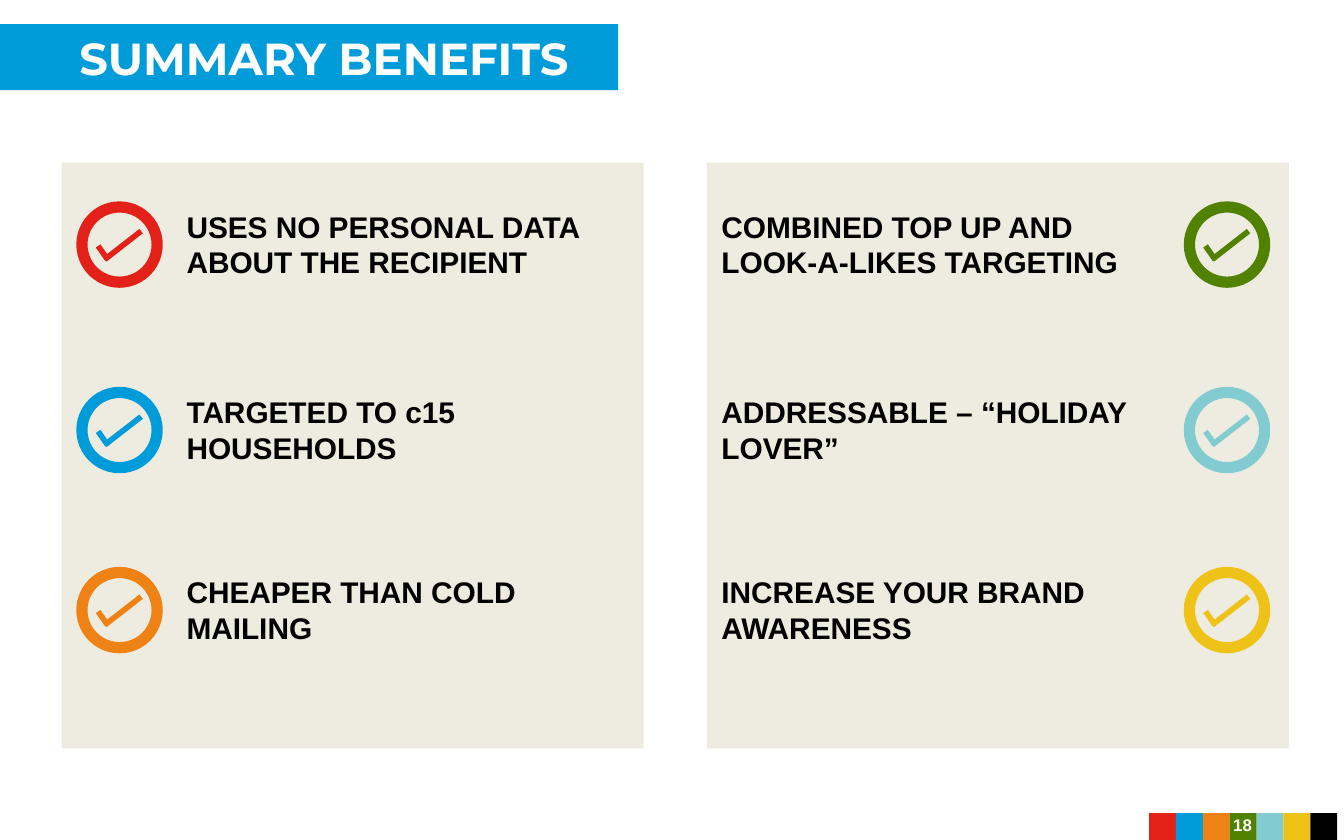
from lxml import etree
from pptx import Presentation
from pptx.dml.color import RGBColor
from pptx.enum.shapes import MSO_CONNECTOR, MSO_SHAPE
from pptx.enum.text import MSO_ANCHOR, PP_ALIGN
from pptx.oxml.ns import qn
from pptx.util import Inches, Pt

COLORS = {
    "red": "E32119", "blue": "009CDA", "orange": "EF8214", "green": "508200",
    "aqua": "82CBD0", "yellow": "EEC216", "black": "000000",
    "white": "FFFFFF", "beige": "EEECE1",
}
HEADING = "SUMMARY BENEFITS"
PAGE_NUMBER = "18"
STRIP = ["red", "blue", "orange", "green", "aqua", "yellow", "black"]
COLUMNS = [
    {"panel_x": 0.46, "tick_x": 0.61, "text_x": 1.29, "benefits": [
        ("red", ["USES NO PERSONAL DATA", "ABOUT THE RECIPIENT"]),
        ("blue", ["TARGETED TO c15 HOUSEHOLDS"]),
        ("orange", ["CHEAPER THAN COLD", "MAILING"]),
    ]},
    {"panel_x": 5.26, "tick_x": 8.85, "text_x": 5.27, "benefits": [
        ("green", ["COMBINED TOP UP AND LOOK-A-LIKES TARGETING"]),
        ("aqua", ["ADDRESSABLE – “HOLIDAY LOVER”"]),
        ("yellow", ["INCREASE YOUR BRAND AWARENESS"]),
    ]},
]
ROW_TOPS = [1.54, 2.92, 4.26]
RING_SIZE = 0.56
TICK_STROKES = [((0.12, 0.29), (0.19, 0.39)), ((0.17, 0.39), (0.44, 0.18))]
SQUARE = 0.2


def rgb(color):
    return RGBColor.from_string(COLORS[color])


def add_box(slide, kind, x, y, width, height):
    box = slide.shapes.add_shape(
        kind, Inches(x), Inches(y), Inches(width), Inches(height))
    box.shadow.inherit = False
    return box


def add_block(slide, color, x, y, width, height):
    block = add_box(slide, MSO_SHAPE.RECTANGLE, x, y, width, height)
    block.fill.solid()
    block.fill.fore_color.rgb = rgb(color)
    block.line.fill.background()


def add_words(paragraph, words, size, color, font="Arial"):
    run = paragraph.add_run()
    run.text = words
    run.font.name = font
    run.font.size = Pt(size)
    run.font.bold = True
    run.font.color.rgb = rgb(color)


def add_text(slide, lines, x, y, width, height, size, color, align):
    box = slide.shapes.add_textbox(
        Inches(x), Inches(y), Inches(width), Inches(height))
    frame = box.text_frame
    frame.word_wrap = True
    for index, line in enumerate(lines):
        paragraph = frame.add_paragraph() if index else frame.paragraphs[0]
        paragraph.alignment = align
        add_words(paragraph, line, size, color)
    return frame


def add_tick(slide, color, x, y):
    """Draw a ring with a two-stroke tick inside it."""
    ring = add_box(slide, MSO_SHAPE.OVAL, x, y, RING_SIZE, RING_SIZE)
    ring.fill.background()
    ring.line.color.rgb = rgb(color)
    ring.line.width = Pt(6)
    for (x1, y1), (x2, y2) in TICK_STROKES:
        stroke = slide.shapes.add_connector(
            MSO_CONNECTOR.STRAIGHT, Inches(x + x1), Inches(y + y1),
            Inches(x + x2), Inches(y + y2))
        stroke.line.color.rgb = rgb(color)
        stroke.line.width = Pt(3)
        etree.SubElement(stroke._element.spPr, qn("a:effectLst"))


def add_heading(slide):
    title = slide.shapes.title
    title.left, title.top = Inches(-0.04), Inches(0.18)
    title.width, title.height = Inches(4.64), Inches(0.49)
    title.fill.solid()
    title.fill.fore_color.rgb = rgb("blue")
    frame = title.text_frame
    frame.word_wrap = False
    frame.vertical_anchor = MSO_ANCHOR.MIDDLE
    frame.margin_left = Inches(0.63)
    frame.paragraphs[0].alignment = PP_ALIGN.LEFT
    add_words(frame.paragraphs[0], HEADING, 24, "white", "Montserrat")


def main():
    prs = Presentation()
    prs.slide_width, prs.slide_height = Inches(10), Inches(6.25)
    slide = prs.slides.add_slide(prs.slide_layouts.get_by_name("Title Only"))

    add_heading(slide)
    for index, color in enumerate(STRIP):
        add_block(slide, color, 8.55 + index * SQUARE, 6.05, SQUARE, SQUARE)
    number = add_text(slide, [PAGE_NUMBER], 8.97, 5.97, 0.55, 0.33,
                      9, "white", PP_ALIGN.CENTER)
    number.vertical_anchor = MSO_ANCHOR.MIDDLE

    for column in COLUMNS:
        add_block(slide, "beige", column["panel_x"], 1.21, 4.33, 4.36)
        for top, (color, lines) in zip(ROW_TOPS, column["benefits"]):
            add_tick(slide, color, column["tick_x"], top)
            add_text(slide, lines, column["text_x"], top - 0.04, 3.54, 0.64,
                     16, "black", PP_ALIGN.LEFT)

    prs.save("out.pptx")


if __name__ == "__main__":
    main()
